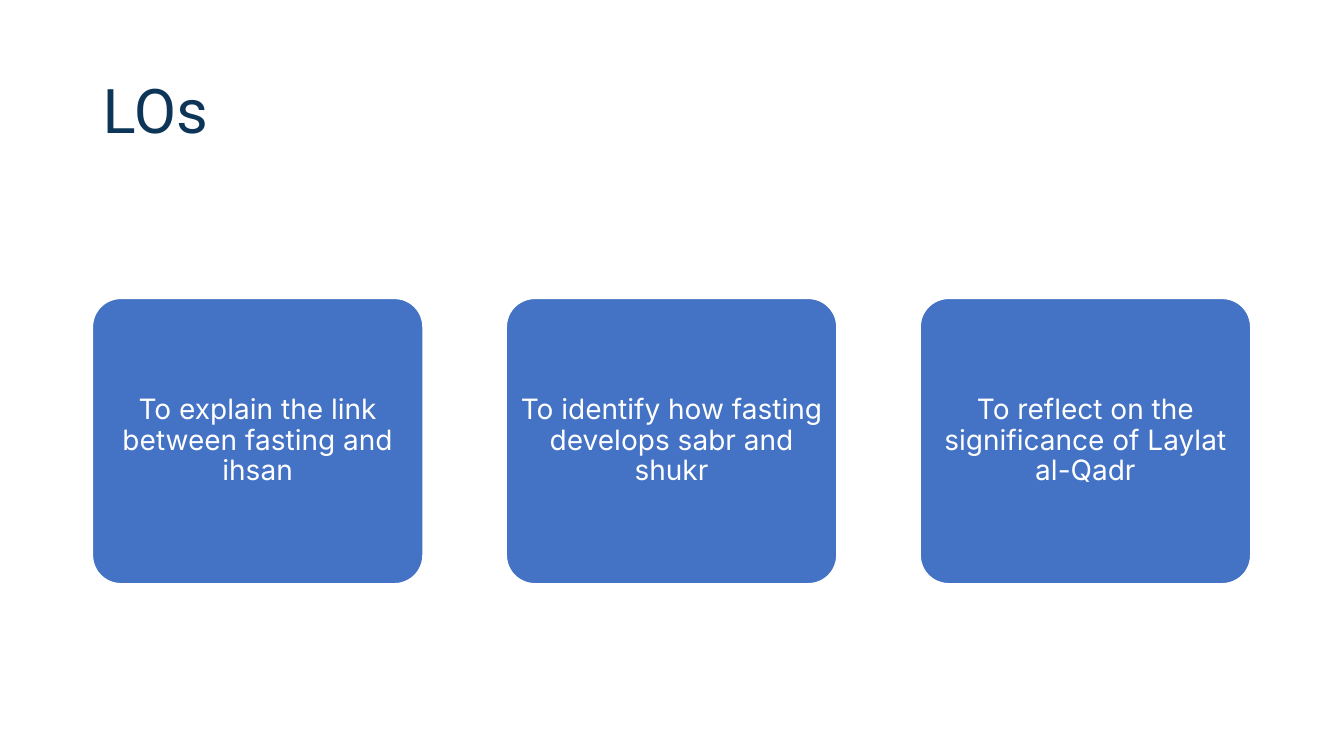
"""Build the learning objectives slide: a title above three rounded cards."""
from pptx import Presentation
from pptx import util as u
from pptx.dml.color import RGBColor
from pptx.enum import shapes, text

COLOURS = {"title": "0D3558", "card": "4472C4", "white": "FFFFFF"}
OBJECTIVES = [
    "To explain the link between fasting and ihsan",
    "To identify how fasting develops sabr and shukr",
    "To reflect on the significance of Laylat al-Qadr",
]
LEFT, TOP = 2.33, 7.52
CARD_WIDTH, CARD_HEIGHT, CARD_STEP = 8.33, 7.19, 10.43


def style(paragraph, font_name, size, colour, alignment):
    paragraph.alignment = alignment
    paragraph.line_spacing = 0.9
    paragraph.font.name = font_name
    paragraph.font.size = u.Pt(size)
    paragraph.font.color.rgb = RGBColor.from_string(COLOURS[colour])


deck = Presentation()
deck.slide_width, deck.slide_height = u.Cm(33.87), u.Cm(19.05)
slide = deck.slides.add_slide(deck.slide_layouts[5])

heading = slide.shapes.title
heading.left, heading.top = u.Cm(LEFT), u.Cm(1.01)
heading.width, heading.height = u.Cm(29.21), u.Cm(3.68)
heading.text_frame.text = "LOs"
heading.text_frame.vertical_anchor = text.MSO_ANCHOR.MIDDLE
style(heading.text_frame.paragraphs[0], "Roboto", 44, "title", text.PP_ALIGN.LEFT)

for index, objective in enumerate(OBJECTIVES):
    card = slide.shapes.add_shape(
        shapes.MSO_SHAPE.ROUNDED_RECTANGLE,
        u.Cm(LEFT + index * CARD_STEP), u.Cm(TOP), u.Cm(CARD_WIDTH), u.Cm(CARD_HEIGHT),
    )
    card.adjustments[0] = 0.1
    card.shadow.inherit = False
    card.fill.solid()
    card.fill.fore_color.rgb = RGBColor.from_string(COLOURS["card"])
    card.line.color.rgb = RGBColor.from_string(COLOURS["white"])
    card.line.width = u.Pt(1)

    frame = card.text_frame
    frame.word_wrap = True
    frame.vertical_anchor = text.MSO_ANCHOR.MIDDLE
    frame.margin_left = frame.margin_right = u.Cm(0.1)
    frame.margin_top = frame.margin_bottom = u.Cm(0.08)
    frame.text = objective
    style(frame.paragraphs[0], "Inter", 20, "white", text.PP_ALIGN.CENTER)

deck.save("out.pptx")
